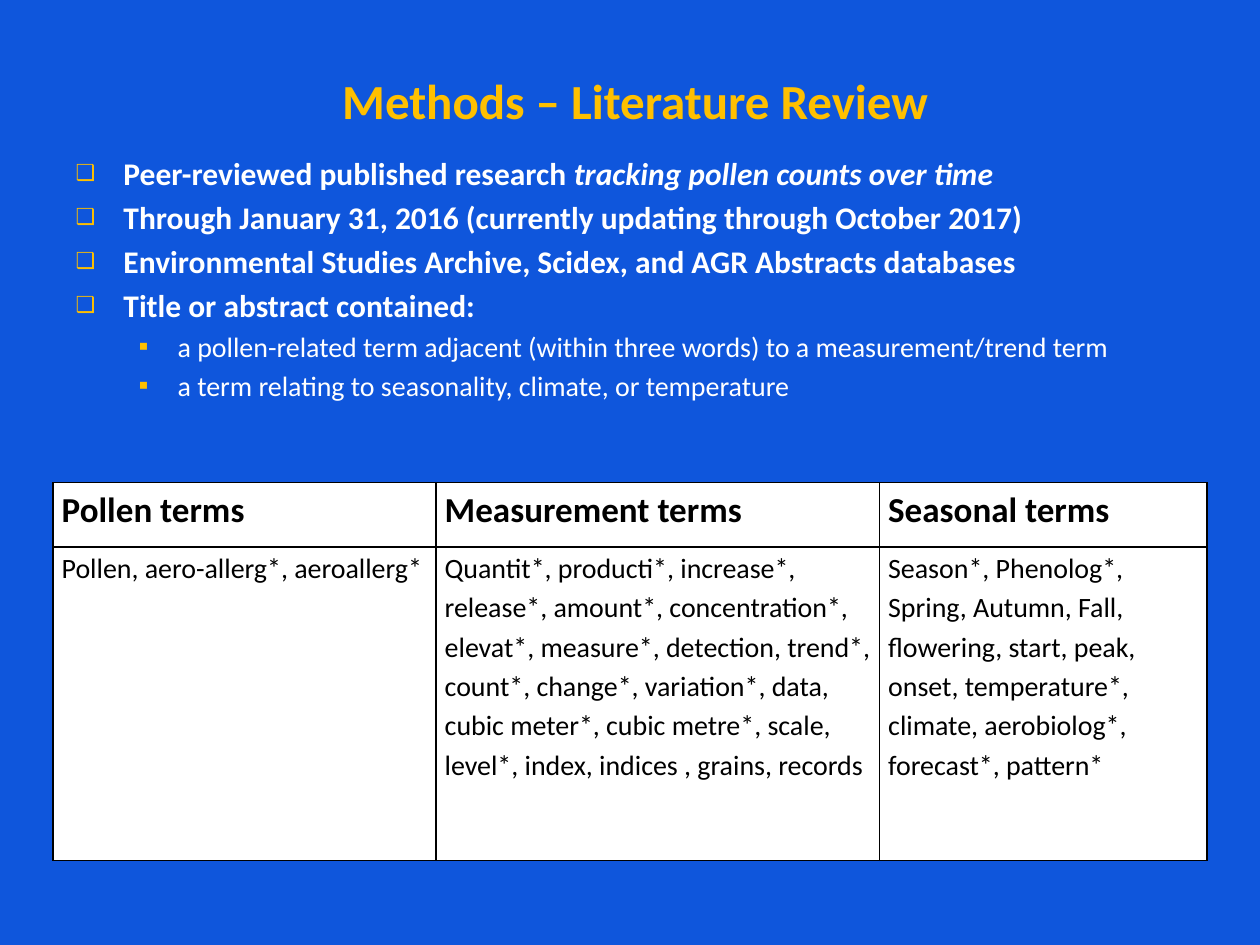
from dataclasses import dataclass

from lxml.etree import SubElement
from pptx import Presentation
from pptx.dml.color import RGBColor
from pptx.enum.text import MSO_ANCHOR as Anchor, MSO_AUTO_SIZE as AutoSize, PP_ALIGN as Align
from pptx.oxml.ns import qn
from pptx.util import Inches, Pt


@dataclass(frozen=True)
class Theme:
    font: str = "Calibri"
    background: str = "0F56DC"
    accent: str = "FFC000"
    light: str = "FFFFFF"
    dark: str = "000000"
    title_size: int = 28
    header_size: int = 20
    body_size: int = 18
    detail_size: int = 16


@dataclass(frozen=True)
class BulletLevel:
    symbol: str
    scale: int
    margin: float
    hanging: float
    size: int
    bold: bool


THEME = Theme()
LEVELS = [
    BulletLevel("❑", 70, 0.38, 0.38, THEME.body_size, True),
    BulletLevel("▪", 100, 0.81, 0.31, THEME.detail_size, False),
]

# Each point is its level and its (text, italic) runs.
POINTS = [
    (0, [("Peer-reviewed published research ", False), ("tracking pollen counts over time", True)]),
    (0, [("Through January 31, 2016 (currently updating through October 2017)", False)]),
    (0, [("Environmental Studies Archive, Scidex, and AGR Abstracts databases", False)]),
    (0, [("Title or abstract contained:", False)]),
    (1, [("a pollen-related term adjacent (within three words) to a measurement/trend term", False)]),
    (1, [("a term relating to seasonality, climate, or temperature", False)]),
]

SEARCH_TERMS = [
    ["Pollen terms", "Measurement terms", "Seasonal terms"],
    [
        "Pollen, aero-allerg*, aeroallerg*",
        "Quantit*, producti*, increase*, release*, amount*, concentration*, elevat*, measure*, "
        "detection, trend*, count*, change*, variation*, data, cubic meter*, cubic metre*, "
        "scale, level*, index, indices , grains, records",
        "Season*, Phenolog*, Spring, Autumn, Fall, flowering, start, peak, onset, temperature*, "
        "climate, aerobiolog*, forecast*, pattern*",
    ],
]


class SlideBuilder:
    def __init__(self, slide, theme):
        self.slide = slide
        self.theme = theme
        fill = slide.background.fill
        fill.solid()
        fill.fore_color.rgb = RGBColor.from_string(theme.background)

    def style(self, font, size, color, bold=False, italic=False):
        font.name = self.theme.font
        font.size = Pt(size)
        font.bold = bold
        font.italic = italic
        font.color.rgb = RGBColor.from_string(color)

    def place(self, shape, left, top, width, height):
        shape.left, shape.top = Inches(left), Inches(top)
        shape.width, shape.height = Inches(width), Inches(height)
        shape.text_frame.word_wrap = True
        shape.text_frame.auto_size = AutoSize.NONE

    def title(self, text, *box):
        shape = self.slide.shapes.title
        self.place(shape, *box)
        frame = shape.text_frame
        frame.text = text
        frame.vertical_anchor = Anchor.BOTTOM
        paragraph = frame.paragraphs[0]
        paragraph.alignment = Align.CENTER
        paragraph.line_spacing = Pt(30)
        self.style(paragraph.runs[0].font, self.theme.title_size, self.theme.accent, bold=True)

    def bullet(self, paragraph, level):
        properties = paragraph._p.get_or_add_pPr()
        properties.set("marL", str(Inches(level.margin)))
        properties.set("indent", str(-Inches(level.hanging)))
        color = SubElement(properties, qn("a:buClr"))
        SubElement(color, qn("a:srgbClr"), val=self.theme.accent)
        SubElement(properties, qn("a:buSzPct"), val=str(level.scale * 1000))
        SubElement(properties, qn("a:buChar"), char=level.symbol)

    def bullet_list(self, points, *box):
        shape = self.slide.placeholders[1]
        self.place(shape, *box)
        frame = shape.text_frame
        for index, (depth, runs) in enumerate(points):
            paragraph = frame.add_paragraph() if index else frame.paragraphs[0]
            level = LEVELS[depth]
            paragraph.level = depth
            self.bullet(paragraph, level)
            paragraph.space_before = Pt(0.2 * level.size if index else 0)
            for text, italic in runs:
                run = paragraph.add_run()
                run.text = text
                self.style(run.font, level.size, self.theme.light, level.bold, italic)

    def cell_borders(self, cell):
        properties = cell._tc.get_or_add_tcPr()
        for side in ("lnL", "lnR", "lnT", "lnB"):
            line = SubElement(properties, qn(f"a:{side}"), w=str(Pt(1)))
            fill = SubElement(line, qn("a:solidFill"))
            SubElement(fill, qn("a:srgbClr"), val=self.theme.dark)

    def cell(self, cell, text, is_header):
        self.cell_borders(cell)
        cell.fill.solid()
        cell.fill.fore_color.rgb = RGBColor.from_string(self.theme.light)
        cell.margin_left = cell.margin_right = Inches(0.07)
        cell.margin_top = cell.margin_bottom = 0
        cell.text_frame.text = text
        paragraph = cell.text_frame.paragraphs[0]
        paragraph.line_spacing = 1.15
        size = self.theme.header_size if is_header else self.theme.detail_size
        self.style(paragraph.runs[0].font, size, self.theme.dark, bold=is_header)

    def table(self, rows, left, top, widths, heights):
        table = self.slide.shapes.add_table(
            len(heights), len(widths), Inches(left), Inches(top),
            Inches(sum(widths)), Inches(sum(heights)),
        ).table
        for column, width in zip(table.columns, widths):
            column.width = Inches(width)
        for row, height in zip(table.rows, heights):
            row.height = Inches(height)
        for row_index, texts in enumerate(rows):
            for column_index, text in enumerate(texts):
                self.cell(table.cell(row_index, column_index), text, row_index == 0)


def main():
    presentation = Presentation()
    presentation.slide_width, presentation.slide_height = Inches(10), Inches(7.5)
    slide = presentation.slides.add_slide(presentation.slide_layouts[1])
    builder = SlideBuilder(slide, THEME)
    builder.title("Methods – Literature Review", 0.54, 0.08, 9, 1)
    builder.bullet_list(POINTS, 0.5, 1.17, 9, 5.17)
    builder.table(SEARCH_TERMS, 0.42, 3.83, [3.04, 3.52, 2.6], [0.51, 2.49])
    presentation.save("out.pptx")


if __name__ == "__main__":
    main()
